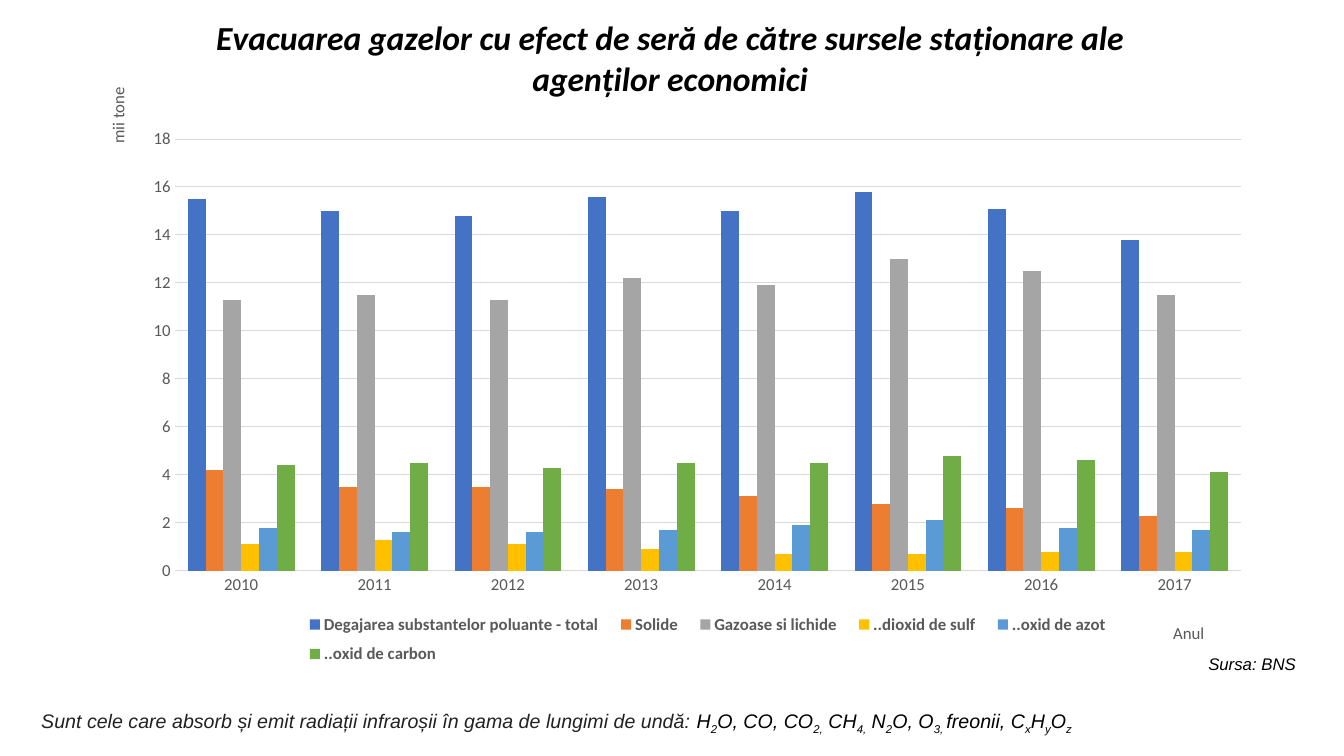
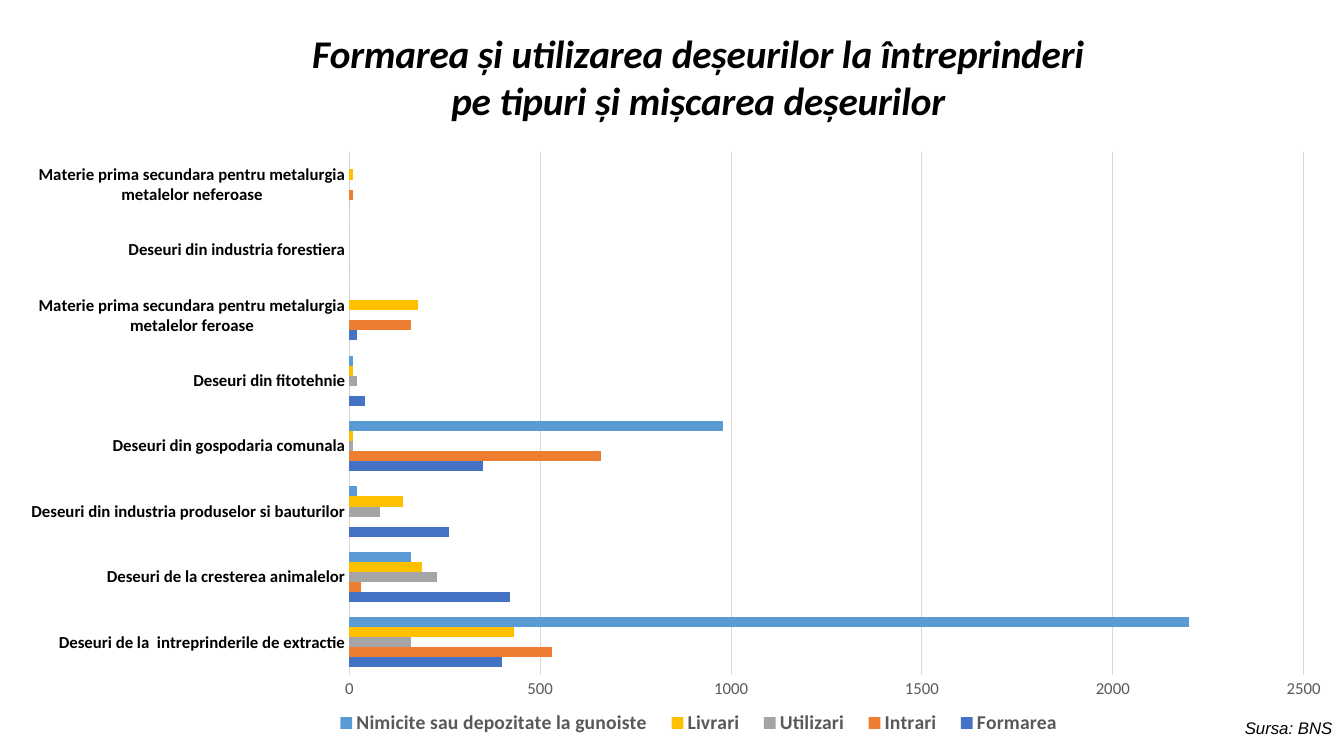
from dataclasses import dataclass
from lxml.etree import SubElement
from pptx import Presentation
from pptx.chart.data import CategoryChartData
from pptx.dml.color import RGBColor
from pptx.enum.chart import XL_CHART_TYPE, XL_LEGEND_POSITION, XL_TICK_MARK
from pptx.enum.text import MSO_AUTO_SIZE
from pptx.oxml.ns import qn
from pptx.util import Cm, Pt


# Colours and type sizes
@dataclass(frozen=True)
class Theme:
    black: str = "000000"
    dark: str = "222222"
    grey: str = "595959"
    grid: str = "D9D9D9"
    series: tuple = ("4472C4", "ED7D31", "A5A5A5", "FFC000", "5B9BD5", "70AD47")
    chart: str = "Calibri"
    text: str = "Arial"
    small: int = 12
    body: int = 14
    base: int = 10


THEME = Theme()

YEARS = [str(year) for year in range(2010, 2018)]
GASES = {
    "Degajarea substantelor poluante - total": (15.5, 15, 14.8, 15.6, 15, 15.8, 15.1, 13.8),
    "Solide": (4.2, 3.5, 3.5, 3.4, 3.1, 2.8, 2.6, 2.3),
    "Gazoase si lichide": (11.3, 11.5, 11.3, 12.2, 11.9, 13, 12.5, 11.5),
    "..dioxid de sulf": (1.1, 1.3, 1.1, 0.9, 0.7, 0.7, 0.8, 0.8),
    "..oxid de azot": (1.8, 1.6, 1.6, 1.7, 1.9, 2.1, 1.8, 1.7),
    "..oxid de carbon": (4.4, 4.5, 4.3, 4.5, 4.5, 4.8, 4.6, 4.1),
}
KINDS = [
    "Deseuri de la  intreprinderile de extractie",
    "Deseuri de la cresterea animalelor",
    "Deseuri din industria produselor si bauturilor",
    "Deseuri din gospodaria comunala",
    "Deseuri din fitotehnie",
    "Materie prima secundara pentru metalurgia metalelor feroase",
    "Deseuri din industria forestiera",
    "Materie prima secundara pentru metalurgia metalelor neferoase",
]
WASTE = {
    "Formarea": (400, 420, 260, 350, 40, 20, 0, 0),
    "Intrari": (530, 30, 0, 660, 0, 160, 0, 10),
    "Utilizari": (160, 230, 80, 10, 20, 0, 0, 0),
    "Livrari": (430, 190, 140, 10, 10, 180, 0, 10),
    "Nimicite sau depozitate la gunoiste": (2200, 160, 20, 980, 10, 0, 0, 0),
}
LEAD = "Sunt cele care absorb și emit radiații infraroșii în gama de lungimi de undă: "
# Every second part is a subscript
GAS_LIST = "H|2|O, CO, CO|2,| CH|4,| N|2|O, O|3, |freonii, C|x|H|y|O|z"


def style(font, size, color, face, bold=False, italic=False):
    font.size, font.name = Pt(size), face
    font.bold, font.italic = bold, italic
    font.color.rgb = RGBColor.from_string(color)


def place(node, prev, x, y, w=None, h=None, inner=False):
    """Fix a chart part at fractions of the chart's size."""
    for old in node.findall(qn("c:layout")):
        node.remove(old)
    box = node.makeelement(qn("c:layout"))
    if prev:
        node.find(qn(prev)).addnext(box)
    else:
        node.insert(0, box)
    man = SubElement(box, qn("c:manualLayout"))
    pairs = [("xMode", "edge"), ("yMode", "edge"), ("x", x), ("y", y), ("w", w), ("h", h)]
    if inner:
        pairs.insert(0, ("layoutTarget", "inner"))
    for tag, val in pairs:
        if val is not None:
            SubElement(man, qn("c:" + tag)).set("val", str(val))


def add_title(title, text, spot, size, color, bold=False, turn=0):
    frame = title.text_frame
    frame.text = text
    for para in frame.paragraphs:
        for run in para.runs:
            style(run.font, size, color, THEME.chart, bold, bold)
    body = title._element.find(".//" + qn("a:bodyPr"))
    body.set("rot", str(turn * 60000))
    body.set("vert", "horz")
    place(title._element, "c:tx", *spot)


def set_axis(axis, color=THEME.grey, bold=False):
    axis.major_tick_mark = axis.minor_tick_mark = XL_TICK_MARK.NONE
    axis.format.line.fill.background()
    style(axis.tick_labels.font, THEME.small, color, THEME.chart, bold)


def add_bars(slide, kind, box, cats, rows, top, step):
    data = CategoryChartData()
    data.categories = cats
    for name, vals in rows.items():
        data.add_series(name, vals)
    chart = slide.shapes.add_chart(kind, *map(Cm, box), data).chart
    style(chart.font, THEME.base, THEME.black, THEME.chart)
    plot = chart.plots[0]
    plot.gap_width, plot.overlap, plot.vary_by_categories = 150, 0, False
    for item, color in zip(plot.series, THEME.series):
        item.format.fill.solid()
        item.format.fill.fore_color.rgb = RGBColor.from_string(color)
        item.invert_if_negative = False
    # Axes and grid
    set_axis(chart.category_axis)
    axis = chart.value_axis
    set_axis(axis)
    axis.minimum_scale, axis.maximum_scale, axis.major_unit = 0, top, step
    axis.has_major_gridlines = True
    line = axis.major_gridlines.format.line
    line.width = Pt(0.75)
    line.color.rgb = RGBColor.from_string(THEME.grid)
    return chart


def lay_out(chart, plot, legend, size):
    place(chart._chartSpace.chart.plotArea, None, *plot, inner=True)
    chart.has_legend = True
    key = chart.legend
    key.position = XL_LEGEND_POSITION.BOTTOM
    key.include_in_layout = False
    style(key.font, size, THEME.grey, THEME.chart, True)
    place(key._element, "c:legendPos", *legend)


def add_text(slide, box, parts, size, wrap):
    """Write (text, colour, is subscript) parts as one line."""
    frame = slide.shapes.add_textbox(*map(Cm, box)).text_frame
    frame.word_wrap = wrap
    frame.auto_size = MSO_AUTO_SIZE.SHAPE_TO_FIT_TEXT
    for text, color, sub in parts:
        run = frame.paragraphs[0].add_run()
        run.text = text
        style(run.font, size, color, THEME.text, italic=True)
        if sub:
            run.font._element.set("baseline", "-25000")


def add_source(slide, left, top):
    add_text(slide, (left, top, 2.74, 0.76), [("Sursa: BNS", THEME.black, False)],
             THEME.small, False)


def gas_slide(slide):
    parts = [(LEAD, THEME.dark, False)]
    parts += [(t, THEME.black, i % 2 == 1) for i, t in enumerate(GAS_LIST.split("|"))]
    add_text(slide, (0.79, 17.73, 26.59, 0.86), parts, THEME.body, True)
    chart = add_bars(slide, XL_CHART_TYPE.COLUMN_CLUSTERED, (2.01, 0.05, 29.87, 17.27),
                     YEARS, GASES, 18, 2)
    add_title(chart.chart_title, "Evacuarea gazelor cu efect de seră de către sursele "
              "staționare ale agenților economici", (0.11, 0.01), 24, THEME.black, True)
    add_title(chart.category_axis.axis_title, "Anul", (0.92, 0.9), THEME.small, THEME.grey)
    add_title(chart.value_axis.axis_title, "mii tone", (0.02, 0.12), THEME.small,
              THEME.grey, turn=-90)
    lay_out(chart, (0.08, 0.2, 0.9, 0.63), (0.18, 0.88, 0.7, 0.1), THEME.small)
    add_source(slide, 30.2, 16.36)


def waste_slide(slide):
    chart = add_bars(slide, XL_CHART_TYPE.BAR_CLUSTERED, (0, 0.3, 33.87, 18.57),
                     KINDS, WASTE, 2500, 500)
    set_axis(chart.category_axis, THEME.black, True)
    add_title(chart.chart_title, "Formarea și utilizarea deșeurilor la întreprinderi\n"
              "pe tipuri și mișcarea deșeurilor", (0.23, 0.02), 28, THEME.black, True)
    lay_out(chart, (0.26, 0.19, 0.71, 0.71), (0.24, 0.94, 0.56, 0.05), THEME.body)
    add_source(slide, 31.12, 17.96)


def main():
    deck = Presentation()
    deck.slide_width, deck.slide_height = Cm(33.87), Cm(19.05)
    for build in (gas_slide, waste_slide):
        build(deck.slides.add_slide(deck.slide_layouts[6]))
    deck.save("out.pptx")


if __name__ == "__main__":
    main()
